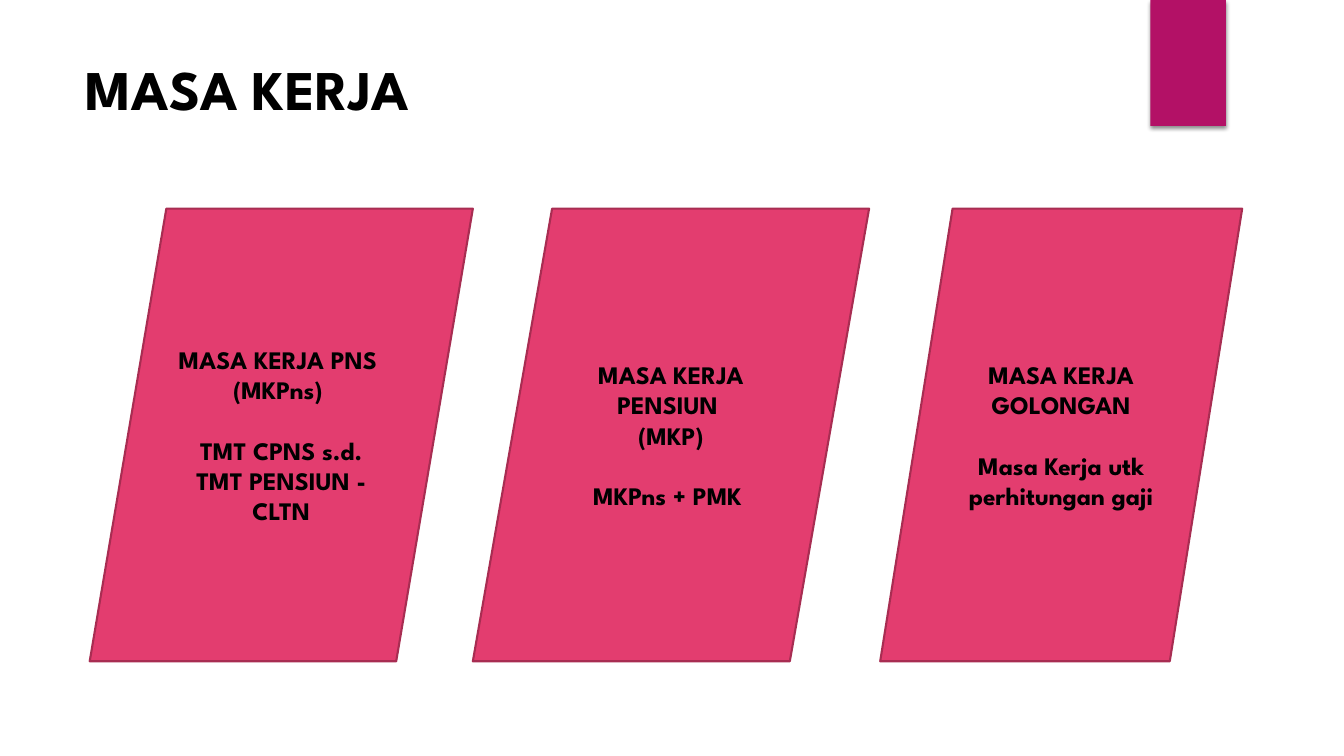
from lxml import etree
from pptx import Presentation
from pptx.dml.color import RGBColor
from pptx.enum.shapes import MSO_SHAPE as Shape
from pptx.enum.text import MSO_ANCHOR as Anchor, MSO_AUTO_SIZE as AutoSize, PP_ALIGN as Align
from pptx.oxml import parse_xml
from pptx.oxml.ns import nsdecls
from pptx.util import Inches, Pt


def color(value):
    return RGBColor.from_string(value)


class SlideBuilder:
    """Draws the elements of one slide in a shared style."""

    font_name = "League Spartan"
    ink, pink, outline, magenta = "000000", "E33D6F", "A82D52", "B31166"

    def __init__(self, presentation):
        self.slide = presentation.slides.add_slide(presentation.slide_layouts[5])

    def format_paragraph(self, paragraph, size, alignment):
        paragraph.alignment = alignment
        for run in paragraph.runs:
            run.font.name = self.font_name
            run.font.size = Pt(size)
            run.font.bold = True
            run.font.color.rgb = color(self.ink)

    def add_title(self, text, left, top, width, height):
        title = self.slide.shapes.title
        title.left, title.top = Inches(left), Inches(top)
        title.width, title.height = Inches(width), Inches(height)
        frame = title.text_frame
        frame.text = text
        frame.word_wrap = True
        frame.auto_size = AutoSize.NONE
        frame.vertical_anchor = Anchor.TOP
        self.format_paragraph(frame.paragraphs[0], 40, Align.LEFT)

    def add_shape(self, kind, left, top, width, height, fill):
        shape = self.slide.shapes.add_shape(
            kind, Inches(left), Inches(top), Inches(width), Inches(height))
        shape.shadow.inherit = False
        shape.fill.solid()
        shape.fill.fore_color.rgb = color(fill)
        return shape

    def add_ribbon(self, left, top, width, height):
        ribbon = self.add_shape(Shape.RECTANGLE, left, top, width, height, self.magenta)
        ribbon.line.fill.background()
        effects = ribbon.element.spPr.find("{*}effectLst")
        shadow = parse_xml(
            f'<a:outerShdw {nsdecls("a")} blurRad="{Pt(3)}" dist="{Pt(2)}" dir="5400000" '
            'rotWithShape="0"/>')
        tint = etree.SubElement(shadow, shadow.tag.replace("outerShdw", "srgbClr"), val=self.ink)
        etree.SubElement(tint, shadow.tag.replace("outerShdw", "alpha"), val="45000")
        effects.append(shadow)

    def add_card(self, left, width, heading, detail):
        card = self.add_shape(Shape.FLOWCHART_DATA, left, 2.07, width, 4.49, self.pink)
        card.line.color.rgb = color(self.outline)
        card.line.width = Pt(1.5)
        frame = card.text_frame
        frame.word_wrap = True
        frame.vertical_anchor = Anchor.MIDDLE
        frame.text = "\n".join([*heading, detail])
        for paragraph in frame.paragraphs:
            self.format_paragraph(paragraph, 18, Align.CENTER)
        frame.paragraphs[-1].space_before = Pt(21.6)


def main():
    presentation = Presentation()
    presentation.slide_width = Inches(13.33)
    presentation.slide_height = Inches(7.5)
    builder = SlideBuilder(presentation)
    builder.add_ribbon(11.41, 0, 0.75, 1.25)
    cards = [
        (0.89, 3.8, ["MASA KERJA PNS ", "(MKPns) "], "TMT CPNS s.d. TMT PENSIUN - CLTN"),
        (4.69, 3.93, ["MASA KERJA PENSIUN ", "(MKP)"], "MKPns + PMK "),
        (8.73, 3.59, ["MASA KERJA GOLONGAN"], "Masa Kerja utk perhitungan gaji"),
    ]
    for card in cards:
        builder.add_card(*card)
    builder.add_title("MASA KERJA", 0.75, 0.49, 9.27, 0.77)
    presentation.save("out.pptx")


if __name__ == "__main__":
    main()
